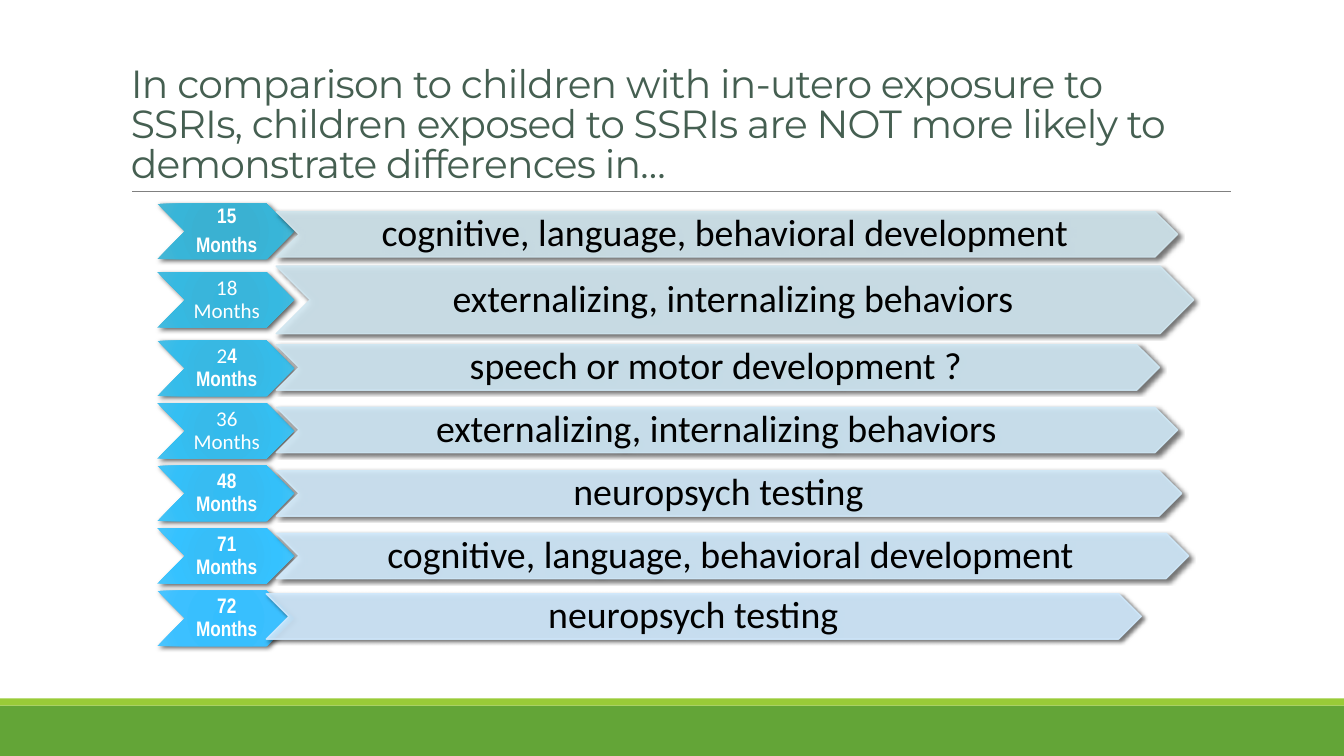
from collections import namedtuple

from lxml import etree
from pptx import Presentation
from pptx.dml.color import RGBColor
from pptx.enum.shapes import MSO_CONNECTOR, MSO_SHAPE
from pptx.enum.text import MSO_ANCHOR, PP_ALIGN
from pptx.oxml.ns import qn
from pptx.util import Inches, Pt

RECT, CHEVRON = MSO_SHAPE.RECTANGLE, MSO_SHAPE.CHEVRON
STRAIGHT = MSO_CONNECTOR.STRAIGHT
MIDDLE, BOTTOM = MSO_ANCHOR.MIDDLE, MSO_ANCHOR.BOTTOM
CENTER, LEFT = PP_ALIGN.CENTER, PP_ALIGN.LEFT


class Theme:
    title, rule = "455F51", "808080"
    band, stripe = "63A537", "99CB38"
    month_text, finding_text, shadow = "FFFFFF", "000000", "000000"
    title_font, body_font, narrow_font = "Montserrat", "Calibri", "Arial Narrow"
    title_size, month_size, finding_size = 28, 15, 27


Row = namedtuple("Row", "month finding left width height drop pad stops tint")
# Month paragraphs are lists of (text, narrow bold?) runs; drop is the bar's
# offset from the row top, pad its right text inset
ROWS = [
    Row([[("15", True)], [("Months", True)]],
        "cognitive, language, behavioral development",
        2.74, 8.94, 0.45, 0.08, 0.08, "37B1D3 3AB1D2 38B5D8 48B7D5", "D0E5ED"),
    Row([[("18 Months", False)]], "externalizing, internalizing behaviors",
        2.74, 9.1, 0.67, 0, 0.08, "35B5DC 39B5DB 36B9E1 46BADE", "D0E6F0"),
    Row([[("2", False), ("4 Months", True)]], "speech or motor development ?",
        2.74, 8.76, 0.45, 0.04, 0.08, "34B8E4 38B8E3 35BCEA 46BEE6", "CFE7F3"),
    Row([[("36 Months", False)]], "externalizing, internalizing behaviors",
        2.74, 8.94, 0.45, 0.04, 0.25, "33BAEC 37BAEA 34BFF2 46C0EE", "CFE8F6"),
    Row([[("48 Months", True)]], "neuropsych testing",
        2.74, 8.98, 0.45, 0.05, 0.25, "33BCF3 37BCF2 34C0F9 46C3F5", "D0E8F8"),
    Row([[("71 Months", True)]], "cognitive, language, behavioral development",
        2.74, 9.05, 0.45, 0.05, 0.08, "33BDF9 37BEF8 35C2FF 47C5FB", "D0E9FB"),
    Row([[("72 Months", True)]], "neuropsych testing",
        2.64, 8.68, 0.45, 0.03, 0.25, "34BEFF 38BFFE 3CC0FF 4BC5FF", "D0E9FD"),
]
STOP_POSITIONS = (0, 34, 70, 100)
MONTH_W, MONTH_H, ROW_GAP = 1.36, 0.55, 0.07


def add_el(parent, tag, **attrs):
    el = etree.SubElement(parent, qn(tag))
    for name, value in attrs.items():
        el.set(name, str(value))
    return el


def add_box(s, shape, x, y, w, h, color):
    sp = s.shapes.add_shape(shape, Inches(x), Inches(y), Inches(w), Inches(h))
    sp.shadow.inherit = False
    sp.fill.solid()
    sp.fill.fore_color.rgb = RGBColor.from_string(color)
    sp.line.fill.background()
    return sp


def cast_shadow(sp, blur, dist):
    effects = sp._element.spPr.find(qn("a:effectLst"))
    shadow = add_el(effects, "a:outerShdw", blurRad=Pt(blur), dist=Pt(dist),
                    dir=45 * 60000, algn="tl", rotWithShape=0)
    clr = add_el(shadow, "a:srgbClr", val=Theme.shadow)
    add_el(clr, "a:alpha", val=60000)


def radial_fill(sp, colors):
    grad = etree.Element(qn("a:gradFill"), rotWithShape="1")
    stops = add_el(grad, "a:gsLst")
    for pos, color in zip(STOP_POSITIONS, colors):
        add_el(add_el(stops, "a:gs", pos=pos * 1000), "a:srgbClr", val=color)
    add_el(add_el(grad, "a:path", path="circle"), "a:fillToRect",
           l=100000, t=100000, r=100000, b=100000)
    spPr = sp._element.spPr
    spPr.replace(spPr.find(qn("a:solidFill")), grad)


def set_frame(sp, anchor, left, top, right, bottom):
    tf = sp.text_frame
    tf.word_wrap = True
    tf.vertical_anchor = anchor
    tf.margin_left, tf.margin_top = Inches(left), Inches(top)
    tf.margin_right, tf.margin_bottom = Inches(right), Inches(bottom)
    return tf


def set_paragraph(p, align, spacing, after=0):
    p.alignment = align
    p.line_spacing = spacing
    p.space_after = Pt(after)


def add_run(p, text, font, size, color, bold=False):
    r = p.add_run()
    r.text = text
    r.font.name, r.font.size, r.font.bold = font, Pt(size), bold
    r.font.color.rgb = RGBColor.from_string(color)
    return r


def add_footer(s, x, y, w, h):
    stripe_h = 0.07
    add_box(s, RECT, x, y + stripe_h, w, h - stripe_h, Theme.band)
    add_box(s, RECT, x, y, w, stripe_h, Theme.stripe)


def add_title(s, x, y, w, h, text):
    # Rule under the title
    rule = s.shapes.add_connector(STRAIGHT, Inches(x + 0.11), Inches(y + h),
                                  Inches(x + w + 0.01), Inches(y + h))
    rule.line.color.rgb = RGBColor.from_string(Theme.rule)
    rule.line.width = Pt(0.5)
    add_el(rule._element.spPr, "a:effectLst")
    # Title text
    sp = s.shapes.add_textbox(Inches(x), Inches(y), Inches(w), Inches(h))
    p = set_frame(sp, BOTTOM, 0.1, 0.05, 0.1, 0.05).paragraphs[0]
    set_paragraph(p, LEFT, 0.85)
    r = add_run(p, text, Theme.title_font, Theme.title_size, Theme.title)
    r.font._element.set("spc", "-50")


def add_month(s, x, y, row):
    sp = add_box(s, CHEVRON, x, y, MONTH_W, MONTH_H, row.tint)
    radial_fill(sp, row.stops.split())
    cast_shadow(sp, 3.5, 2)
    tf = set_frame(sp, MIDDLE, 0.02, 0.01, 0, 0.01)
    for i, runs in enumerate(row.month):
        p = tf.add_paragraph() if i else tf.paragraphs[0]
        set_paragraph(p, CENTER, 0.9, 5)
        for text, narrow in runs:
            font = Theme.narrow_font if narrow else Theme.body_font
            add_run(p, text, font, Theme.month_size, Theme.month_text, narrow)


def add_finding(s, y, row):
    sp = add_box(s, CHEVRON, row.left, y, row.width, row.height, row.tint)
    sp.line.color.rgb = RGBColor.from_string(row.tint)
    sp.line.width = Pt(1)
    for clr in sp._element.spPr.iter(qn("a:srgbClr")):
        add_el(clr, "a:alpha", val=90000)
    cast_shadow(sp, 3, 2)
    p = set_frame(sp, MIDDLE, 0.04, 0.02, row.pad, 0.02).paragraphs[0]
    set_paragraph(p, CENTER, 0.9)
    add_run(p, row.finding, Theme.body_font, Theme.finding_size, Theme.finding_text)


def add_timeline(s, x, y, rows):
    # Each row is as tall as its taller chevron
    for row in rows:
        row_h = max(MONTH_H, row.height)
        add_month(s, x, y + (row_h - MONTH_H) / 2, row)
        add_finding(s, y + row.drop, row)
        y += row_h + ROW_GAP


def main():
    prs = Presentation()
    prs.slide_width, prs.slide_height = Inches(13.33), Inches(7.5)
    s = prs.slides.add_slide(prs.slide_layouts[6])
    add_footer(s, 0, 6.93, 13.33, 0.57)
    add_title(s, 1.2, 0.31, 11, 1.59,
              "In comparison to children with in-utero exposure to SSRIs, "
              "children exposed to SSRIs are NOT more likely to demonstrate "
              "differences in…")
    add_timeline(s, 1.56, 2.02, ROWS)
    prs.save("out.pptx")


if __name__ == "__main__":
    main()
